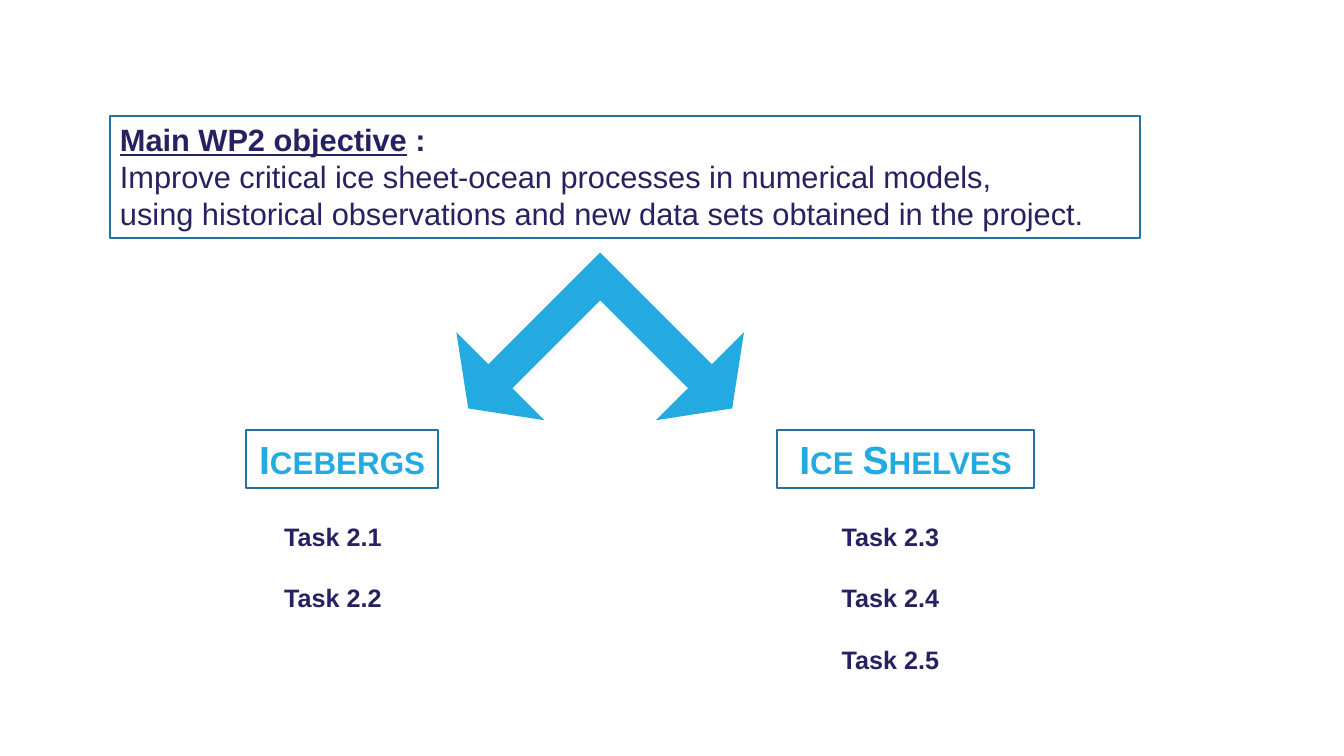
from pptx import Presentation
from pptx.dml.color import RGBColor
from pptx.enum.shapes import MSO_SHAPE
from pptx.enum.text import MSO_ANCHOR, MSO_AUTO_SIZE, PP_ALIGN
from pptx.oxml.ns import qn
from pptx.util import Pt

ARROW = MSO_SHAPE.LEFT_UP_ARROW
TOP = MSO_ANCHOR.TOP
FIXED = MSO_AUTO_SIZE.NONE
LEFT, CENTER = PP_ALIGN.LEFT, PP_ALIGN.CENTER
COMPARISON_LAYOUT = 4

COLORS = {"navy": "262262", "sky": "23AAE1", "border": "23729F"}
FORMATS = {
    "lead": {"size": Pt(22), "bold": True, "underline": True},
    "lead_end": {"size": Pt(22), "bold": True, "underline": False},
    "objective": {"size": Pt(22), "bold": False},
    "heading": {"size": Pt(28), "bold": True},
    "task": {"size": Pt(18), "bold": True},
}
OBJECTIVE = [
    [("Main WP2 objective", "lead"), (" :", "lead_end")],
    [("Improve critical ice sheet-ocean processes in numerical models,", "objective")],
    [("using historical observations and new data sets obtained in the project.", "objective")],
]
THEMES = [
    ("Icebergs", ["Task 2.1", "Task 2.2"], (175.7, 307.4, 137.5, 41), 20.1),
    ("Ice Shelves", ["Task 2.3", "Task 2.4", "Task 2.5"], (555.1, 307.4, 183.6, 41), 38.9),
]


def color(name):
    """Return the named colour."""
    return RGBColor.from_string(COLORS[name])


def place(shape, box):
    """Put a shape at a box of left, top, width and height in points."""
    for name, value in zip(("left", "top", "width", "height"), box):
        setattr(shape, name, Pt(value))


def write(shape, lines, ink, align=LEFT, gap=0):
    """Fill a placeholder with paragraphs of formatted spans."""
    frame = shape.text_frame
    settings = {"word_wrap": True, "auto_size": FIXED, "vertical_anchor": TOP,
                "margin_left": Pt(7.2), "margin_right": Pt(7.2),
                "margin_top": Pt(3.6), "margin_bottom": Pt(3.6)}
    for name, value in settings.items():
        setattr(frame, name, value)
    for index, line in enumerate(lines):
        para = frame.add_paragraph() if index else frame.paragraphs[0]
        properties = para._p.get_or_add_pPr()
        properties.set("marL", "0")
        properties.set("indent", "0")
        para.alignment = align
        para.line_spacing = 1.0
        para.space_before = Pt(gap if index else 0)
        properties.append(properties.makeelement(qn("a:buNone"), {}))
        for text, style in line:
            span = para.add_run()
            span.text = text
            span.font.name = "Arial"
            span.font.color.rgb = color(ink)
            for name, value in FORMATS[style].items():
                setattr(span.font, name, value)
            if style == "heading":
                span._r.get_or_add_rPr().set("cap", "small")


def outline(shape):
    """Give a shape the thin blue border."""
    shape.line.color.rgb = color("border")
    shape.line.width = Pt(1.5)


def add_objective(page, box):
    """Write the main objective in the title."""
    title = page.shapes.title
    place(title, box)
    outline(title)
    write(title, OBJECTIVE, "navy")


def add_split_arrow(page, box):
    """Draw the arrow that leads to both themes."""
    arrow = page.shapes.add_shape(ARROW, *map(Pt, box))
    arrow.rotation = 225
    for index, value in enumerate((0.136, 0.25, 0.183)):
        arrow.adjustments[index] = value
    arrow.fill.solid()
    arrow.fill.fore_color.rgb = color("sky")
    arrow.line.fill.background()
    arrow.shadow.inherit = False


def add_theme(heading, body, name, tasks, box, inset):
    """Write a framed theme name with its tasks below."""
    left, top, width, height = box
    place(heading, box)
    outline(heading)
    write(heading, [[(name, "heading")]], "sky", CENTER)
    place(body, (left + inset, top + height + 20.2, 105, 43.7 * len(tasks) - 14.4))
    write(body, [[(task, "task")] for task in tasks], "navy", gap=22.4)


def main():
    """Build and save the slide."""
    deck = Presentation()
    deck.slide_width, deck.slide_height = Pt(960), Pt(540)
    page = deck.slides.add_slide(deck.slide_layouts[COMPARISON_LAYOUT])
    add_objective(page, (78.5, 82.8, 735.8, 87.1))
    add_split_arrow(page, (339.8, 171.4, 177.8, 177.8))
    holders = list(page.placeholders)[1:]
    for index, theme in enumerate(THEMES):
        add_theme(*holders[2 * index:2 * index + 2], *theme)
    deck.save("out.pptx")


if __name__ == "__main__":
    main()
